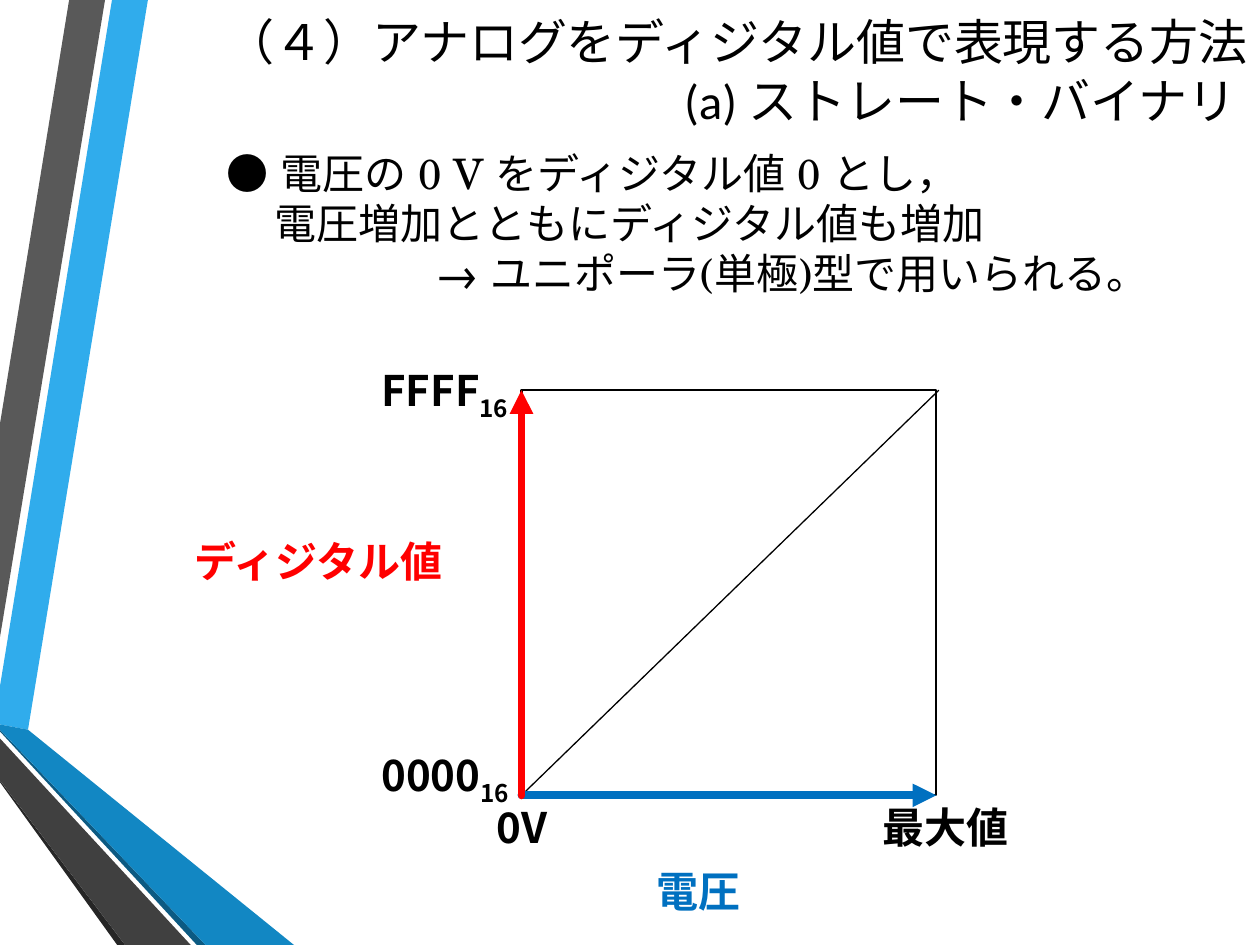
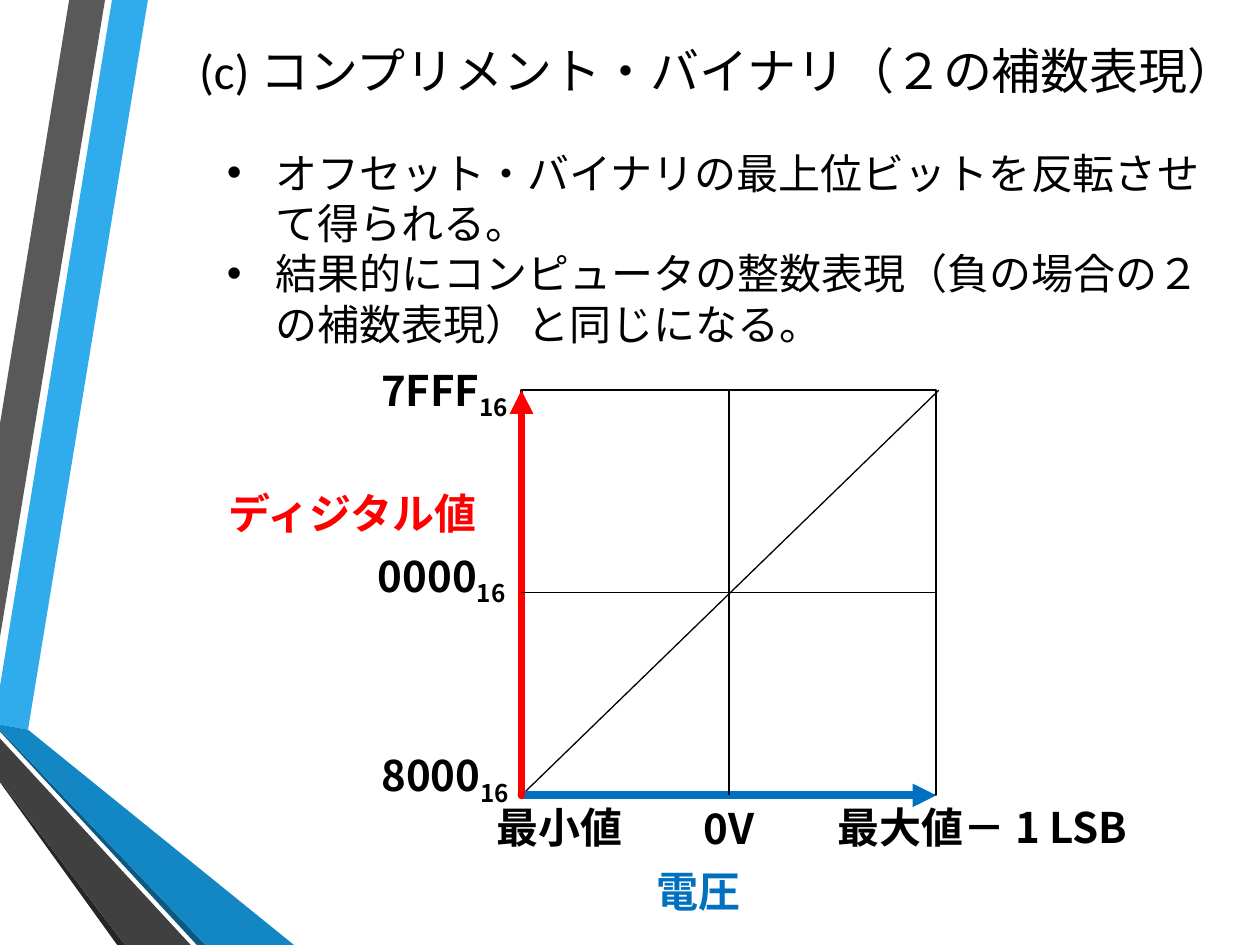
from dataclasses import dataclass

from lxml.etree import SubElement
from pptx import Presentation
from pptx.dml.color import RGBColor
from pptx.enum.lang import MSO_LANGUAGE_ID as Language
from pptx.enum.shapes import MSO_CONNECTOR as Connector
from pptx.enum.shapes import MSO_SHAPE as Preset
from pptx.enum.text import MSO_ANCHOR as Anchor
from pptx.enum.text import PP_ALIGN as Align
from pptx.oxml.ns import qn
from pptx.slide import Slide
from pptx.util import Pt

COLORS = {
    "black": "000000",
    "digital": "FF0000",
    "voltage": "0070C0",
    "sky": "30ACEC",
    "grey": "595959",
    "charcoal": "262626",
    "navy": "0C5A82",
    "blue": "1287C3",
    "dark": "404040",
}
TITLE_FONT = "Calibri"
BODY_FONT = "TeX Gyre Schola"
LABEL_FONT = "Noto Sans CJK JP"

# Edges of the graph, in points
LEFT, TOP, RIGHT, BOTTOM = 298, 223, 535, 454.5
MIDDLE_X, MIDDLE_Y = (LEFT + RIGHT) / 2, (TOP + BOTTOM) / 2


@dataclass(frozen=True)
class Ribbon:
    color: str
    corners: tuple[tuple[float, float], ...]


@dataclass(frozen=True)
class Line:
    start: tuple[float, float]
    end: tuple[float, float]
    color: str = "black"
    width: float = 0.75
    arrow: bool = False


@dataclass(frozen=True)
class Span:
    text: str
    font: str
    size: float = 24
    color: str = "black"
    bold: bool = False
    subscript: bool = False


@dataclass(frozen=True)
class Para:
    spans: tuple[Span, ...]
    align: Align = Align.LEFT
    indent: float = 0
    bullet: bool = False


@dataclass(frozen=True)
class Box:
    left: float
    top: float
    width: float
    height: float
    paras: tuple[Para, ...]
    anchor: Anchor = Anchor.TOP


@dataclass(frozen=True)
class Page:
    boxes: tuple[Box, ...]
    lines: tuple[Line, ...] = ()


RIBBONS = (
    Ribbon("sky", ((0, 392), (0, 414), (16, 417), (84.5, 0), (64, 0))),
    Ribbon("grey", ((60, 0), (39.5, 0), (0, 242), (0, 364))),
    Ribbon("charcoal", ((0, 446), (0, 447), (67, 540), (71.5, 540))),
    Ribbon("navy", ((0, 417), (0, 418), (112.5, 540), (117.5, 540))),
    Ribbon("blue", ((0, 417), (117.5, 540), (168, 540), (16, 417), (0, 414))),
    Ribbon("dark", ((0, 446), (71.5, 540), (109, 540), (0, 422))),
)
GRAPH_LINES = (
    Line((LEFT, BOTTOM), (RIGHT + 1.5, TOP)),
    Line((LEFT, BOTTOM), (RIGHT, BOTTOM), "voltage", 4.5, True),
    Line((LEFT, BOTTOM), (LEFT, TOP), "digital", 4.5, True),
)


def title(left: float, text: str) -> Box:
    """Right-aligned heading that reaches the right edge of the slide."""
    para = Para((Span(text, TITLE_FONT, 28),), Align.RIGHT)
    return Box(left, 0, 720 - left, 80.5, (para,), Anchor.MIDDLE)


def body(height: float, *paras: Para) -> Box:
    return Box(122.5, 80.5, 589, height, paras)


def body_para(text: str, indent: float = 0, bullet: bool = False) -> Para:
    return Para((Span(text, BODY_FONT),), indent=indent, bullet=bullet)


def label(left: float, top: float, width: float, text: str,
          align: Align = Align.LEFT, color: str = "black") -> Box:
    span = Span(text, LABEL_FONT, color=color, bold=True)
    return Box(left, top, width, 36, (Para((span,), align),))


def hex_label(left: float, top: float, digits: str) -> Box:
    """Hexadecimal value with its base as a subscript."""
    spans = (Span(digits, LABEL_FONT, bold=True),
             Span("16", LABEL_FONT, bold=True, subscript=True))
    return Box(left, top, 126, 36, (Para(spans, Align.RIGHT),))


def digital_label(left: float, top: float) -> Box:
    return label(left, top, 180, "ディジタル値", Align.RIGHT, "digital")


VOLTAGE_LABEL = label(319, 491, 160.5, "電圧", Align.CENTER, "voltage")

PAGES = (
    Page((
        title(113, "（４）アナログをディジタル値で表現する方法\v(a) ストレート・バイナリ "),
        body(94.5,
             body_para("● 電圧の 0 V をディジタル値 0 とし，"),
             body_para("電圧増加とともにディジタル値も増加", 27),
             body_para("→ ユニポーラ(単極)型で用いられる。", 120)),
        label(276.5, BOTTOM, 70, "0V"),
        label(497, BOTTOM, 97, "最大値"),
        hex_label(171.5, 205, "FFFF"),
        hex_label(172, 425, "0000"),
        digital_label(80, 302.5),
        VOLTAGE_LABEL,
    )),
    Page((
        title(62, "(c) コンプリメント・バイナリ（２の補数表現） "),
        body(124,
             body_para("オフセット・バイナリの最上位ビットを反転させて得られる。", 28, True),
             body_para("結果的にコンピュータの整数表現（負の場合の２の補数表現）と同じになる。", 28, True)),
        label(276.5, BOTTOM, 91.5, "最小値"),
        label(471.5, BOTTOM, 190, "最大値－ 1 LSB"),
        label(381.5, 455, 70, "0V", Align.CENTER),
        hex_label(171.5, 204.5, "7FFF"),
        hex_label(170, 311, "0000"),
        hex_label(172, 425, "8000"),
        digital_label(99.5, 275),
        VOLTAGE_LABEL,
    ), (
        Line((LEFT, MIDDLE_Y), (RIGHT, MIDDLE_Y)),
        Line((MIDDLE_X, BOTTOM), (MIDDLE_X, TOP)),
    )),
)


def rgb(name: str) -> RGBColor:
    return RGBColor.from_string(COLORS[name])


def draw_ribbon(slide: Slide, ribbon: Ribbon) -> None:
    first, *rest = [(Pt(x), Pt(y)) for x, y in ribbon.corners]
    builder = slide.shapes.build_freeform(*first)
    builder.add_line_segments(rest, close=True)
    shape = builder.convert_to_shape()
    shape.shadow.inherit = False
    shape.fill.solid()
    shape.fill.fore_color.rgb = rgb(ribbon.color)
    shape.line.fill.background()


def draw_frame(slide: Slide) -> None:
    frame = slide.shapes.add_shape(
        Preset.RECTANGLE, Pt(LEFT), Pt(TOP), Pt(RIGHT - LEFT), Pt(BOTTOM - TOP))
    frame.shadow.inherit = False
    frame.fill.background()
    frame.line.color.rgb = rgb("black")
    frame.line.width = Pt(1.25)


def draw_line(slide: Slide, line: Line) -> None:
    connector = slide.shapes.add_connector(
        Connector.STRAIGHT, *(Pt(value) for value in line.start + line.end))
    connector.line.color.rgb = rgb(line.color)
    connector.line.width = Pt(line.width)
    properties = connector._element.spPr
    if line.arrow:
        outline = properties.find(qn("a:ln"))
        outline.set("cap", "rnd")
        SubElement(outline, qn("a:tailEnd"), type="triangle")
    SubElement(properties, qn("a:effectLst"))


def add_span(paragraph, span: Span) -> None:
    run = paragraph.add_run()
    run.text = span.text
    font = run.font
    font.name, font.size, font.bold = span.font, Pt(span.size), span.bold
    font.color.rgb = rgb(span.color)
    font.language_id = Language.JAPANESE
    properties = run._r.get_or_add_rPr()
    SubElement(properties, qn("a:ea"), typeface=span.font)
    if span.subscript:
        properties.set("baseline", "-25000")


def add_para(paragraph, para: Para) -> None:
    paragraph.alignment = para.align
    properties = paragraph._p.get_or_add_pPr()
    properties.set("marL", str(Pt(para.indent)))
    if para.bullet:
        properties.set("indent", str(-Pt(para.indent)))
        SubElement(properties, qn("a:buFont"), typeface="Arial")
        SubElement(properties, qn("a:buChar"), char="•")
    for span in para.spans:
        lines = span.text.split("\v")
        for number, text in enumerate(lines):
            if number:
                paragraph.add_line_break()
            add_span(paragraph, Span(text, span.font, span.size, span.color,
                                     span.bold, span.subscript))


def draw_box(slide: Slide, box: Box) -> None:
    shape = slide.shapes.add_textbox(
        Pt(box.left), Pt(box.top), Pt(box.width), Pt(box.height))
    frame = shape.text_frame
    frame.word_wrap = True
    frame.vertical_anchor = box.anchor
    for number, para in enumerate(box.paras):
        add_para(frame.add_paragraph() if number else frame.paragraphs[0], para)


def draw_page(slide: Slide, page: Page) -> None:
    for ribbon in RIBBONS:
        draw_ribbon(slide, ribbon)
    draw_frame(slide)
    for line in GRAPH_LINES + page.lines:
        draw_line(slide, line)
    for box in page.boxes:
        draw_box(slide, box)


def main() -> None:
    deck = Presentation()
    deck.slide_width, deck.slide_height = Pt(720), Pt(540)
    blank = deck.slide_layouts[6]
    for page in PAGES:
        draw_page(deck.slides.add_slide(blank), page)
    deck.save("out.pptx")


if __name__ == "__main__":
    main()
